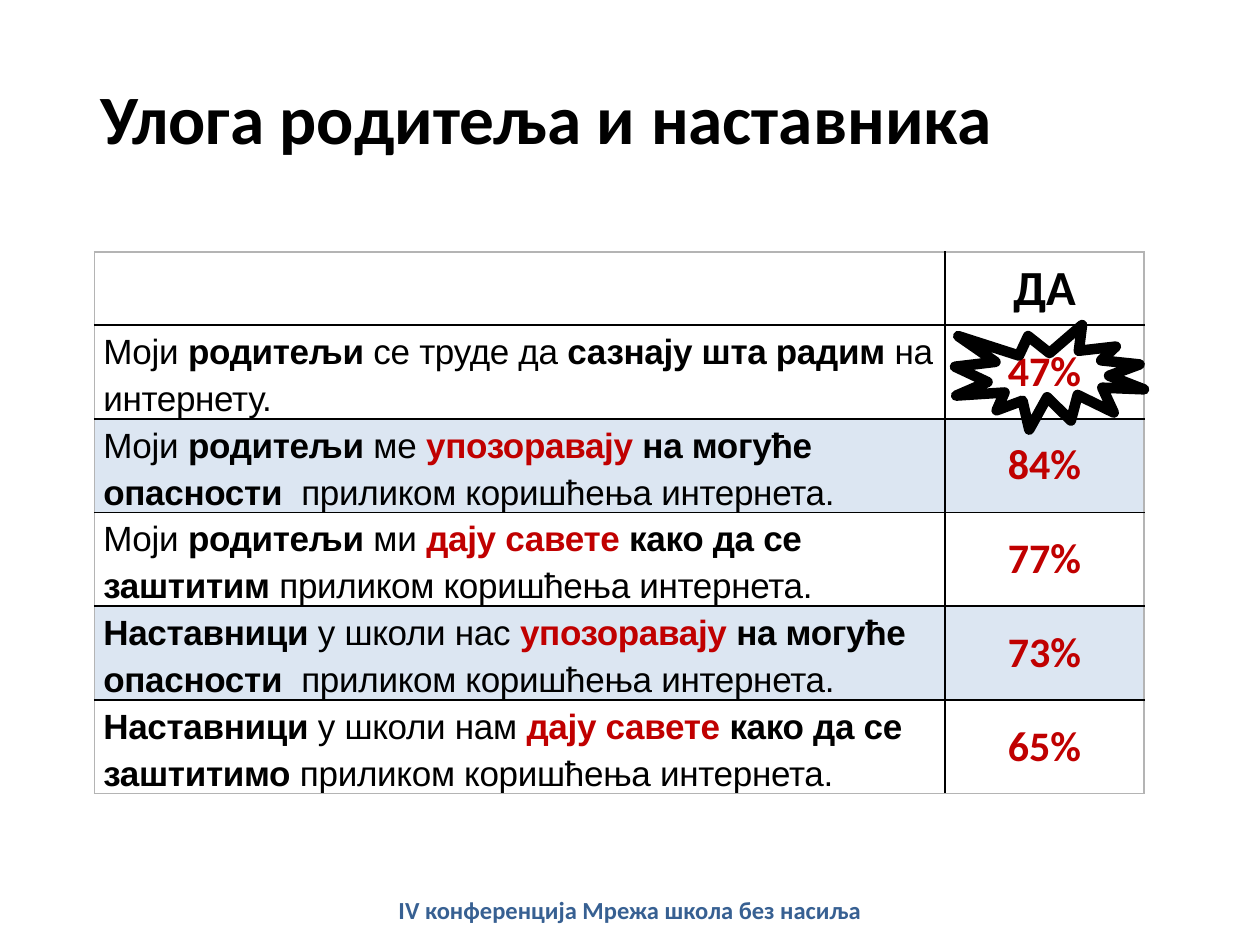
from lxml.etree import SubElement as Sub
from pptx import Presentation
from pptx.dml.color import RGBColor as RGB
from pptx.enum.shapes import MSO_SHAPE as Shape
from pptx.enum.text import MSO_ANCHOR as Anchor, PP_ALIGN as Align
from pptx.oxml.ns import qn
from pptx.util import Inches, Pt

BLACK = RGB(0x00, 0x00, 0x00)
RED = RGB(0xC0, 0x00, 0x00)
BLUE = RGB(0x37, 0x60, 0x92)
BAND = RGB(0xDC, 0xE6, 0xF2)
GREY = RGB(0xB4, 0xB4, 0xB4)

# Slide and table grid, in inches
WIDE, HIGH = 10, 7.5
LEFT, TOP = 0.75, 2
COLS = (6.75, 1.58)
HEAD, ROW = 0.58, 0.74

# Run styles: bold, colour
PLAIN, BOLD, HOT = (False, BLACK), (True, BLACK), (True, RED)

WARN = [("упозоравају", HOT), (" на могуће опасности", BOLD),
        ("  приликом коришћења интернета.", PLAIN)]


def advise(verb):
    return [("дају савете ", HOT), (f"како да се {verb}", BOLD),
            (" приликом коришћења интернета.", PLAIN)]


def parents(word):
    return [("Моји ", PLAIN), ("родитељи", BOLD), (f" {word} ", PLAIN)]


def staff(word):
    return [("Наставници", BOLD), (f" у школи {word} ", PLAIN)]


ROWS = [
    (parents("се труде да") + [("сазнају шта радим ", BOLD),
                               ("на интернету.", PLAIN)], "47%"),
    (parents("ме") + WARN, "84%"),
    (parents("ми") + advise("заштитим"), "77%"),
    (staff("нас") + WARN, "73%"),
    (staff("нам") + advise("заштитимо"), "65%"),
]


def add_run(para, text, size, color, bold=True, font="Calibri", space=None):
    run = para.add_run()
    run.text = text
    run.font.name, run.font.size = font, Pt(size)
    run.font.bold = bold
    run.font.color.rgb = color
    if space is not None:
        run.font._element.set("spc", str(space))


def add_title(slide, text):
    title = slide.shapes.title
    title.left, title.top = Inches(0.5), Inches(0.3)
    title.width, title.height = Inches(7.67), Inches(1.25)
    frame = title.text_frame
    frame.vertical_anchor = Anchor.MIDDLE
    para = frame.paragraphs[0]
    para.alignment = Align.CENTER
    add_run(para, text, 39.6, BLACK)


def add_edge(cell, side, color):
    line = Sub(cell._tc.get_or_add_tcPr(), qn(f"a:{side}"), w=str(Pt(1)))
    fill = Sub(line, qn("a:solidFill"))
    Sub(fill, qn("a:srgbClr"), val=str(color))


def style_cell(cell, row, col):
    # Grey outer frame, black inner grid
    outer = {"lnL": col == 0, "lnR": col == len(COLS) - 1,
             "lnT": row == 0, "lnB": row == len(ROWS)}
    for side, edge in outer.items():
        add_edge(cell, side, GREY if edge else BLACK)
    if row and row % 2 == 0:
        cell.fill.solid()
        cell.fill.fore_color.rgb = BAND
    else:
        cell.fill.background()


def fill_claim(cell, parts):
    cell.margin_left = cell.margin_right = Inches(0.07)
    cell.margin_top = cell.margin_bottom = 0
    para = cell.text_frame.paragraphs[0]
    para.line_spacing = 1.2
    for text, (bold, color) in parts:
        add_run(para, text, 20, color, bold, "Arial", -20)


def fill_share(cell, text, size, color):
    cell.vertical_anchor = Anchor.MIDDLE
    para = cell.text_frame.paragraphs[0]
    para.alignment = Align.CENTER
    add_run(para, text, size, color)


def add_grid(slide):
    count = len(ROWS) + 1
    table = slide.shapes.add_table(
        count, len(COLS), Inches(LEFT), Inches(TOP),
        Inches(sum(COLS)), Inches(HEAD + ROW * len(ROWS))).table
    for col, width in enumerate(COLS):
        table.columns[col].width = Inches(width)
    for row in range(count):
        table.rows[row].height = Inches(ROW if row else HEAD)
        for col in range(len(COLS)):
            style_cell(table.cell(row, col), row, col)
    fill_share(table.cell(0, 1), "ДА", 28, BLACK)
    for row, (parts, share) in enumerate(ROWS, 1):
        fill_claim(table.cell(row, 0), parts)
        fill_share(table.cell(row, 1), share, 24, RED)


def add_burst(slide):
    burst = slide.shapes.add_shape(
        Shape.EXPLOSION1, Inches(7.58), Inches(2.58), Inches(1.5), Inches(0.83))
    burst.shadow.inherit = False
    burst.fill.background()
    burst.line.color.rgb = BLACK
    burst.line.width = Pt(6)
    Sub(burst.line._get_or_add_ln(), qn("a:round"))


def add_footer(slide, text):
    box = slide.shapes.add_textbox(0, Inches(7.1), Inches(WIDE), Inches(0.4))
    frame = box.text_frame
    frame.word_wrap = True
    frame.margin_top = frame.margin_bottom = 0
    para = frame.paragraphs[0]
    para.alignment = Align.CENTER
    add_run(para, text, 14, BLUE)


def main():
    deck = Presentation()
    deck.slide_width, deck.slide_height = Inches(WIDE), Inches(HIGH)
    slide = deck.slides.add_slide(deck.slide_layouts[5])
    add_title(slide, "Улога родитеља и наставника")
    add_grid(slide)
    add_footer(slide, "IV конференција Мрежа школа без насиља")
    add_burst(slide)
    deck.save("out.pptx")


if __name__ == "__main__":
    main()
